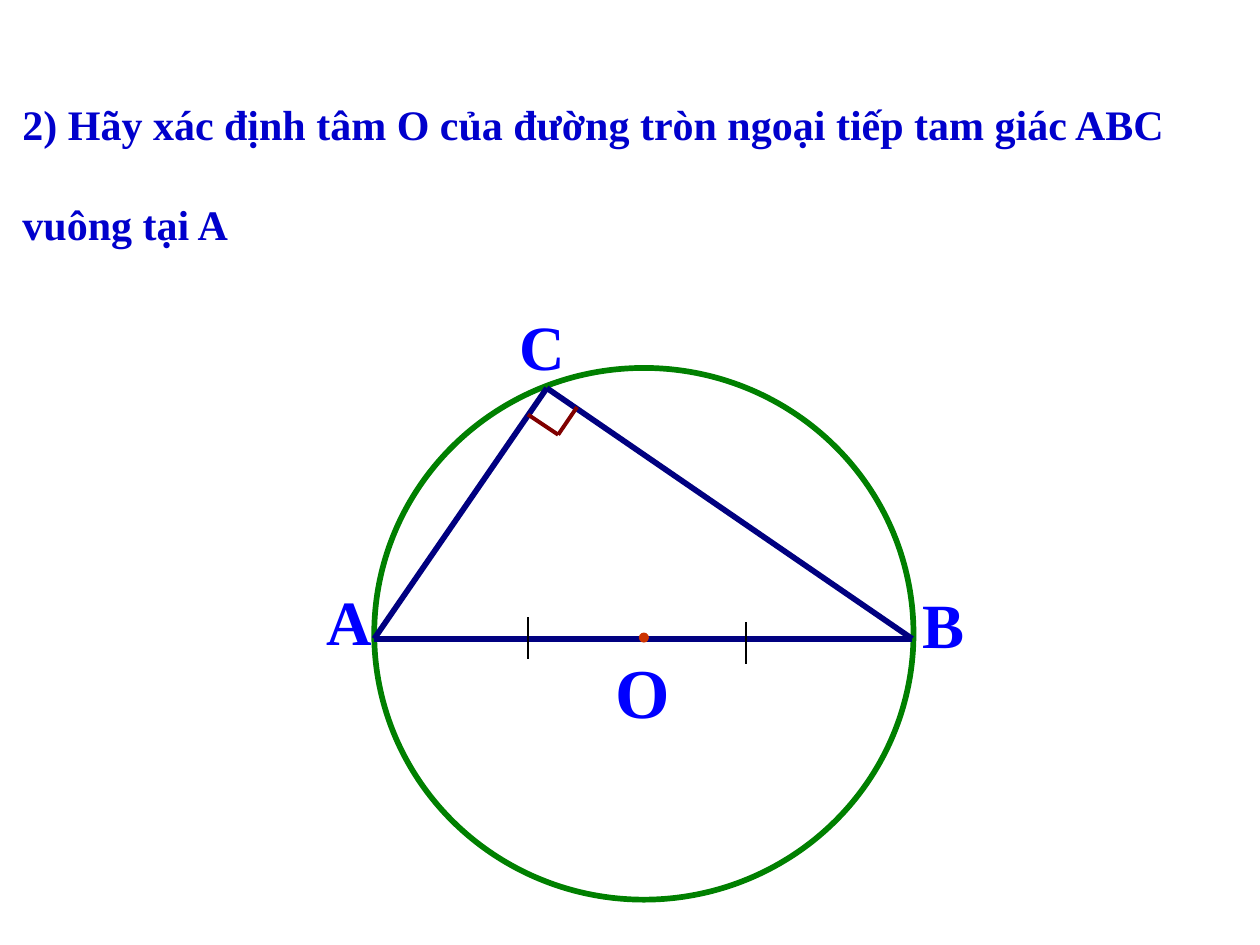
from dataclasses import dataclass

from lxml.etree import SubElement
from pptx import Presentation
from pptx.dml.color import RGBColor
from pptx.enum.shapes import MSO_CONNECTOR, MSO_SHAPE
from pptx.enum.text import MSO_ANCHOR, PP_ALIGN
from pptx.oxml.ns import qn
from pptx.util import Inches, Pt


@dataclass(frozen=True)
class Theme:
    font: str = "Times New Roman"
    question: str = "0000CC"
    label: str = "0000FF"
    circle: str = "008000"
    triangle: str = "000080"
    right_angle: str = "800000"
    center: str = "CC3300"
    tick: str = "000000"
    question_size: float = 24
    vertex_size: float = 36
    center_size: float = 40
    thick: float = 3.25
    medium: float = 2.25
    thin: float = 0.75


class Figure:
    """Draws on one slide; lengths are columns and rows of a 100 by 75 grid."""

    def __init__(self, presentation, theme):
        self.theme = theme
        self.cell = presentation.slide_width / 100
        self.slide = presentation.slides.add_slide(presentation.slide_layouts[6])

    def lengths(self, *cells):
        return [round(count * self.cell) for count in cells]

    def ellipse(self, box, fill=None, line=None):
        shape = self.slide.shapes.add_shape(MSO_SHAPE.OVAL, *self.lengths(*box))
        shape.shadow.inherit = False
        if fill:
            shape.fill.solid()
            shape.fill.fore_color.rgb = RGBColor.from_string(fill)
        else:
            shape.fill.background()
        if line:
            shape.line.color.rgb = RGBColor.from_string(line)
            shape.line.width = Pt(self.theme.thick)
        else:
            shape.line.fill.background()

    def segment(self, start, end, color, width):
        connector = self.slide.shapes.add_connector(
            MSO_CONNECTOR.STRAIGHT, *self.lengths(*start, *end))
        connector.line.color.rgb = RGBColor.from_string(color)
        connector.line.width = Pt(width)
        SubElement(connector._element.spPr, qn("a:effectLst"))

    def text(self, box, words, size, color, before, spacing=None, tight=False):
        frame = self.slide.shapes.add_textbox(*self.lengths(*box)).text_frame
        frame.word_wrap = not tight
        frame.vertical_anchor = MSO_ANCHOR.TOP
        if tight:
            frame.margin_left = frame.margin_right = 0
            frame.margin_top = frame.margin_bottom = 0
        paragraph = frame.paragraphs[0]
        paragraph.text = words
        paragraph.alignment = PP_ALIGN.LEFT
        if spacing:
            paragraph.line_spacing = spacing
        # Space before as a percentage of the line
        space = SubElement(paragraph._p.get_or_add_pPr(), qn("a:spcBef"))
        SubElement(space, qn("a:spcPct")).set("val", str(before * 1000))
        font = paragraph.font
        font.name = self.theme.font
        font.size = Pt(size)
        font.bold = True
        font.color.rgb = RGBColor.from_string(color)


def main():
    presentation = Presentation()
    presentation.slide_width, presentation.slide_height = Inches(10), Inches(7.5)
    theme = Theme()
    figure = Figure(presentation, theme)

    # Circumscribed circle
    figure.ellipse((29.7, 29.2, 42.8, 42.2), line=theme.circle)

    # Triangle
    a, b, c = (29.7, 50.7), (72.4, 50.7), (43.4, 30.8)
    for start, end in ((a, b), (c, a), (c, b)):
        figure.segment(start, end, theme.triangle, theme.thick)

    # Right angle at the top vertex
    corner = (44.3, 34.5)
    for start in ((41.9, 32.9), (45.8, 32.3)):
        figure.segment(start, corner, theme.right_angle, theme.medium)

    # Vertex labels
    for name, left, top, width in (("C", 41.2, 24.4, 3.6),
                                   ("A", 25.9, 46.2, 3.6),
                                   ("B", 73.2, 46.5, 3.3)):
        figure.text((left, top, width, 6), name, theme.vertex_size,
                    theme.label, before=50, tight=True)

    # Center of the circle
    figure.text((47.9, 51, 20, 7.7), "O", theme.center_size, theme.label, before=50)
    figure.ellipse((50.7, 50.2, 0.8, 0.8), fill=theme.center)

    # Equal-length ticks on the two halves of AB
    for column, row in ((41.9, 49), (59.2, 49.4)):
        figure.segment((column, row), (column, row + 3.3), theme.tick, theme.thin)

    # Question
    figure.text((0.8, 3.3, 98.3, 17.2),
                "2) Hãy xác định tâm O của đường tròn ngoại tiếp tam giác ABC vuông tại A",
                theme.question_size, theme.question, before=20, spacing=2.0)

    presentation.save("out.pptx")


if __name__ == "__main__":
    main()
